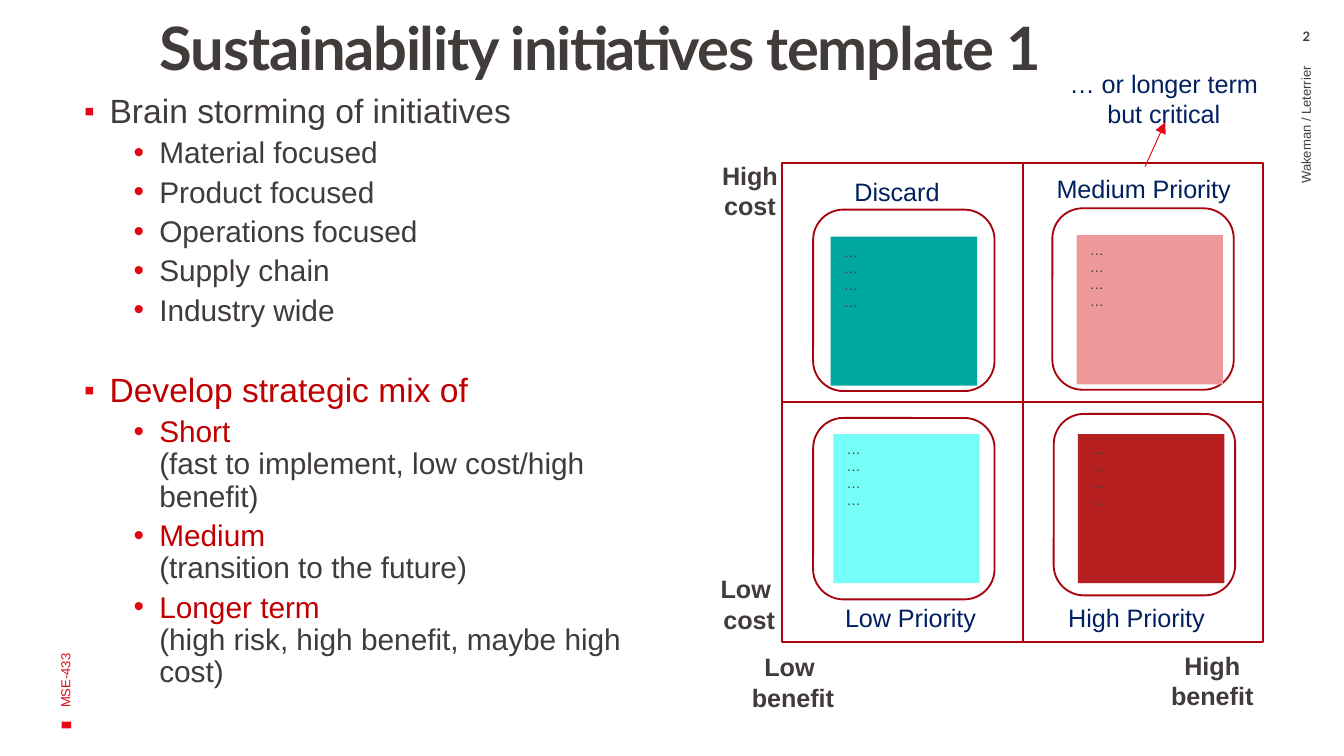
from dataclasses import dataclass
from typing import NamedTuple

from lxml.etree import SubElement
from pptx import Presentation
from pptx.dml.color import RGBColor
from pptx.enum.shapes import MSO_CONNECTOR as Conn, MSO_SHAPE as Shp
from pptx.enum.text import MSO_ANCHOR as Anchor, PP_ALIGN as Align
from pptx.oxml.ns import qn
from pptx.util import Inches, Pt

RED = RGBColor(0xE3, 0x06, 0x13)
CRIMSON = RGBColor(0xA8, 0x04, 0x0E)
ACCENT = RGBColor(0xC0, 0x00, 0x00)
INK = RGBColor(0x41, 0x3C, 0x3A)
NAVY = RGBColor(0x00, 0x20, 0x60)
WHITE = RGBColor(0xFF, 0xFF, 0xFF)
TEAL = RGBColor(0x00, 0xA7, 0x9F)
PINK = RGBColor(0xEE, 0x99, 0x99)
AQUA = RGBColor(0x76, 0xFF, 0xF8)
BRICK = RGBColor(0xB5, 0x1F, 0x1F)

# The slide is a grid of 100 columns by 56.25 rows of square cells
COLS, ROWS = 100, 56.25
CELL = Inches(0.1)


class Box(NamedTuple):
    col: float
    row: float
    cols: float
    rows: float


@dataclass
class Quadrant:
    col: int
    row: int
    fill: RGBColor
    ring: tuple[float, float]
    note: tuple[float, float]


@dataclass
class Label:
    text: str
    box: Box
    axis: bool = False
    align: Align = Align.CENTER
    wrap: bool = False


@dataclass
class Item:
    head: str
    detail: str = ""
    level: int = 1
    color: RGBColor = INK
    before: float = 3.8


QUAD, PITCH, RING = 17.9, 17.8, 13.5
LEFT, TOP = 58.2, 12.1
QUADRANTS = [
    Quadrant(0, 0, TEAL, (60.5, 15.6), (61.8, 17.6)),
    Quadrant(1, 0, PINK, (78.3, 15.5), (80.1, 17.5)),
    Quadrant(0, 1, AQUA, (60.5, 31.1), (62, 32.3)),
    Quadrant(1, 1, BRICK, (78.4, 30.8), (80.2, 32.3)),
]
LABELS = [
    Label("Discard", Box(62.6, 12.6, 8.4, 5.6), align=Align.LEFT),
    Label("Medium Priority", Box(76.6, 12.4, 17, 3.3), wrap=True),
    Label("Low Priority", Box(61.8, 44.3, 11.9, 5.6)),
    Label("High Priority", Box(78.5, 44.3, 12.3, 3.3), align=Align.LEFT),
    Label("Low \ncost", Box(52.6, 42.2, 6.3, 7.8), axis=True),
    Label("High\ncost", Box(52.7, 11.4, 6.2, 7.8), axis=True),
    Label("Low \nbenefit", Box(54.9, 48, 8.2, 7.8), axis=True),
    Label("High\nbenefit", Box(86.1, 47.9, 8.2, 7.8), axis=True),
    Label("… or longer term but critical", Box(78.1, 4.6, 17, 5.6), wrap=True),
]
ITEMS = [
    Item("Brain storming of initiatives", level=0, before=0),
    Item("Material focused"),
    Item("Product focused"),
    Item("Operations focused"),
    Item("Supply chain"),
    Item("Industry wide"),
    Item("Develop strategic mix of", level=0, color=ACCENT, before=24.7),
    Item("Short ", "(fast to implement, low cost/high benefit)", color=ACCENT),
    Item("Medium ", "(transition to the future)", color=ACCENT),
    Item("Longer term ", "(high risk, high benefit, maybe high cost)", color=ACCENT),
]


def cells(*values: float) -> list[int]:
    return [round(v * CELL) for v in values]


def set_font(font, color: RGBColor, **values) -> None:
    for name, value in {"name": "Arial", **values}.items():
        setattr(font, name, value)
    font.color.rgb = color


def add_block(s, kind: Shp, box: Box, fill: RGBColor, line: RGBColor | None = None):
    sp = s.shapes.add_shape(kind, *cells(*box))
    sp.shadow.inherit = False
    sp.fill.solid()
    sp.fill.fore_color.rgb = fill
    if line is None:
        sp.line.fill.background()
    else:
        sp.line.color.rgb = line
        sp.line.width = Pt(1)
    return sp


def write_lines(tf, text: str, align: Align, color: RGBColor, **font) -> None:
    for i, line in enumerate(text.split("\n")):
        p = tf.paragraphs[0] if i == 0 else tf.add_paragraph()
        p.alignment = align
        r = p.add_run()
        r.text = line
        set_font(r.font, color, **font)


def add_text(s, box: Box, text: str, color: RGBColor, align: Align = Align.LEFT,
             frame: dict | None = None, rotation: float = 0, **font):
    sp = s.shapes.add_textbox(*cells(*box))
    sp.rotation = rotation
    for name, value in {"word_wrap": True, **(frame or {})}.items():
        setattr(sp.text_frame, name, value)
    write_lines(sp.text_frame, text, align, color, **font)
    return sp


def add_bullet(p, level: int) -> None:
    pPr = p._p.get_or_add_pPr()
    pPr.set("marL", str(Inches((0.19, 0.56)[level])))
    pPr.set("indent", str(Inches(-0.19)))
    color = SubElement(pPr, qn("a:buClr"))
    SubElement(color, qn("a:srgbClr"), val=str(RED))
    SubElement(pPr, qn("a:buSzPct"), val=("90000", "100000")[level])
    SubElement(pPr, qn("a:buFont"), typeface="Arial")
    SubElement(pPr, qn("a:buChar"), char="▪•"[level])


def add_items(s, box: Box, items: list[Item]) -> None:
    tf = s.shapes.add_textbox(*cells(*box)).text_frame
    tf.word_wrap = True
    tf.margin_left = Inches(0.2)
    for i, item in enumerate(items):
        p = tf.paragraphs[0] if i == 0 else tf.add_paragraph()
        p.level = item.level
        p.line_spacing = 0.9
        p.space_before = Pt(item.before)
        add_bullet(p, item.level)
        size = Pt((18, 16)[item.level])
        r = p.add_run()
        r.text = item.head
        set_font(r.font, item.color, size=size)
        if item.detail:
            p.add_line_break()
            r = p.add_run()
            r.text = item.detail
            set_font(r.font, INK, size=size)


def add_arrow(s, start: tuple[float, float], end: tuple[float, float]) -> None:
    sp = s.shapes.add_connector(Conn.STRAIGHT, *cells(*start, *end))
    sp.line.color.rgb = RED
    sp.line.width = Pt(0.5)
    SubElement(sp.line._get_or_add_ln(), qn("a:tailEnd"), type="triangle")
    SubElement(sp._element.spPr, qn("a:effectLst"))


def main() -> None:
    prs = Presentation()
    prs.slide_width, prs.slide_height = cells(COLS, ROWS)
    s = prs.slides.add_slide(prs.slide_layouts[6])

    # Matrix cells
    for q in QUADRANTS:
        box = Box(LEFT + q.col * QUAD, TOP + q.row * PITCH, QUAD, QUAD)
        add_block(s, Shp.RECTANGLE, box, WHITE, CRIMSON)

    # Bullets and title
    add_items(s, Box(4.25, 6.55, 48.2, 49.7), ITEMS)
    title = add_text(s, Box(9.9, 1.4, 69.5, 11.7), "Sustainability initiatives template 1",
                     INK, frame={"margin_left": Inches(0.2), "margin_top": 0},
                     name="Lato", size=Pt(32), bold=True)
    p = title.text_frame.paragraphs[0]
    p.line_spacing = 0.9
    p.runs[0].font._element.set("spc", "-70")

    # Margin marker, course code, authors and page number
    middle = {"vertical_anchor": Anchor.MIDDLE}
    add_block(s, Shp.RECTANGLE, Box(4.6, 53.7, 0.7, 0.5), RED)
    add_text(s, Box(-13.4, 30.4, 36.5, 10), "MSE-433", RED,
             frame=middle, rotation=270, size=Pt(7))
    add_text(s, Box(77.8, 20.5, 38.7, 5.6), "Wakeman / Leterrier", INK, Align.RIGHT,
             frame=middle, rotation=270, size=Pt(7))
    add_text(s, Box(94.4, 2.1, 5.6, 1.8), "2", INK, Align.CENTER,
             frame={"margin_top": 0, "margin_bottom": 0},
             name="Lato", size=Pt(7), bold=True)

    # Rounded frames with coloured notes
    for q in QUADRANTS:
        add_block(s, Shp.ROUNDED_RECTANGLE, Box(*q.ring, RING, RING), WHITE, CRIMSON)
        note = add_block(s, Shp.RECTANGLE, Box(*q.note, 10.9, 11.1), q.fill)
        note.text_frame.vertical_anchor = Anchor.TOP
        write_lines(note.text_frame, "\n".join("…" * 4), Align.LEFT, INK, size=Pt(7.5))

    # Quadrant and axis labels
    for label in LABELS:
        add_text(s, label.box, label.text, INK if label.axis else NAVY, label.align,
                 frame={"word_wrap": label.wrap}, size=Pt(13.5), bold=label.axis)

    add_arrow(s, (85.2, 12.4), (86.7, 9.1))
    prs.save("out.pptx")


if __name__ == "__main__":
    main()
